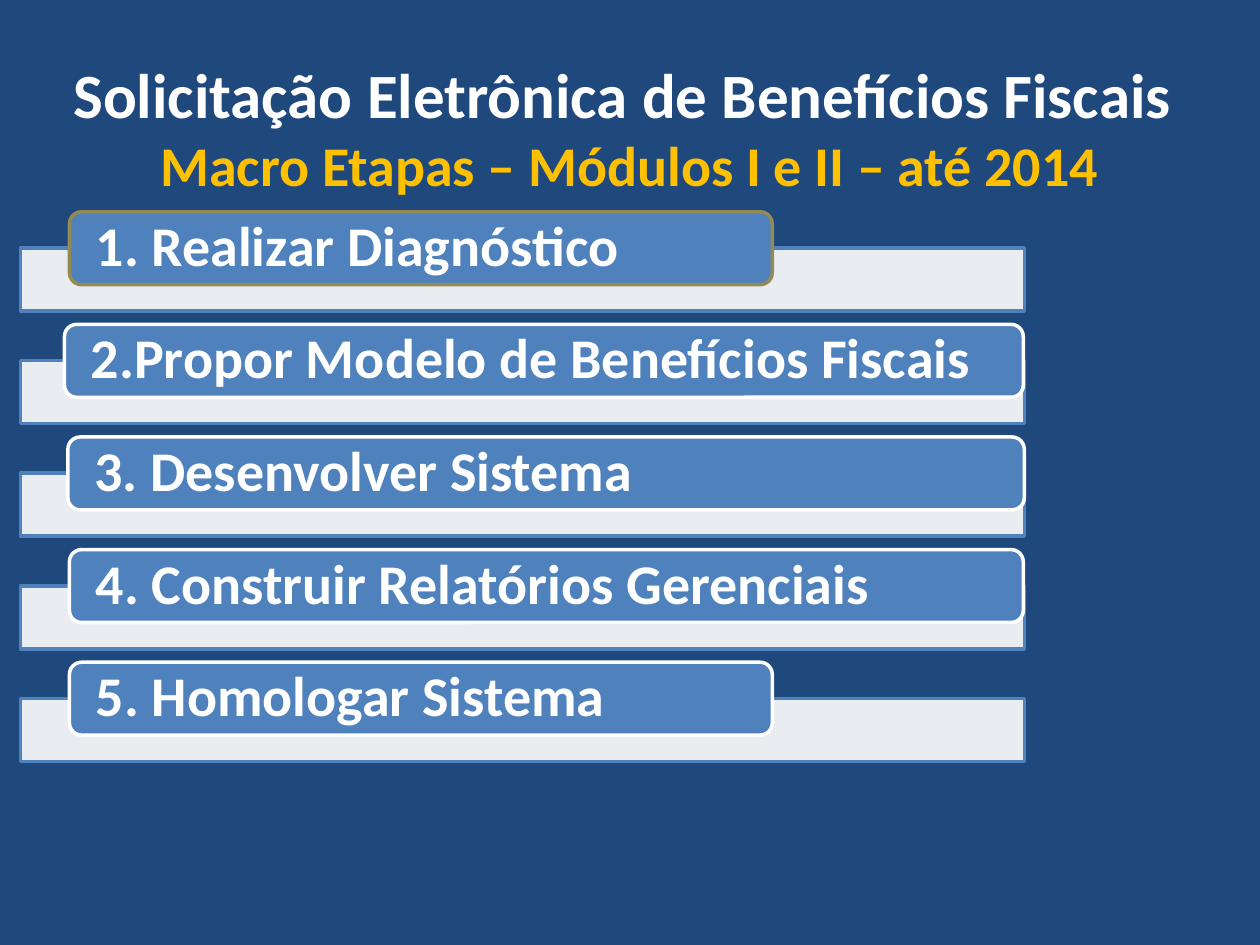
from lxml.etree import SubElement
from pptx import Presentation
from pptx.dml.color import RGBColor
from pptx.enum.shapes import MSO_SHAPE as SHAPE
from pptx.enum.text import MSO_ANCHOR as ANCHOR, PP_ALIGN as ALIGN
from pptx.oxml.ns import qn
from pptx.util import Cm, Pt

COLORS = {
    "navy": "1F497D",
    "blue": "4F81BD",
    "white": "FFFFFF",
    "gold": "FFC000",
    "olive": "948A54",
}
TITLE = [
    ("Solicitação Eletrônica de Benefícios Fiscais ", 36, "white"),
    ("Macro Etapas – Módulos I e II – até 2014", 32, "gold"),
]
STEPS = [
    ("1. Realizar Diagnóstico", 1.4, 14.17, "olive"),
    ("2.Propor Modelo de Benefícios Fiscais", 1.3, 19.33, "white"),
    ("3. Desenvolver Sistema", 1.37, 19.28, "white"),
    ("4. Construir Relatórios Gerenciais", 1.4, 19.23, "white"),
    ("5. Homologar Sistema", 1.4, 14.17, "white"),
]
FIRST_TOP = 4.27
PITCH = 2.27
TRACK_DROP = 0.73


def color(name):
    return RGBColor.from_string(COLORS[name])


def add_run(p, text, size, name):
    r = p.add_run()
    r.text = text
    r.font.name = "Calibri"
    r.font.size = Pt(size)
    r.font.bold = True
    r.font.color.rgb = color(name)


def add_box(slide, kind, left, top, width, height, fill, line):
    sp = slide.shapes.add_shape(kind, Cm(left), Cm(top), Cm(width), Cm(height))
    sp.shadow.inherit = False
    sp.fill.solid()
    sp.fill.fore_color.rgb = color(fill)
    sp.line.color.rgb = color(line)
    sp.line.width = Pt(2)
    return sp


def add_title(slide):
    tf = slide.shapes.add_textbox(Cm(1.19), Cm(0.99), Cm(23.01), Cm(4.7)).text_frame
    tf.word_wrap = True
    for i, (text, size, name) in enumerate(TITLE):
        p = tf.add_paragraph() if i else tf.paragraphs[0]
        p.alignment = ALIGN.CENTER
        add_run(p, text, size, name)


def add_track(slide, top):
    sp = add_box(slide, SHAPE.RECTANGLE, 0.41, top, 20.24, 1.27, "white", "blue")
    rgb = sp.fill._xPr.find(qn("a:solidFill")).find(qn("a:srgbClr"))
    SubElement(rgb, qn("a:alpha"), val="90000")


def add_step(slide, top, text, left, width, line):
    sp = add_box(slide, SHAPE.ROUNDED_RECTANGLE, left, top, width, 1.47, "blue", line)
    tf = sp.text_frame
    tf.word_wrap = True
    tf.vertical_anchor = ANCHOR.MIDDLE
    tf.margin_left = tf.margin_right = Cm(0.46)
    tf.margin_top = tf.margin_bottom = 0
    p = tf.paragraphs[0]
    p.alignment = ALIGN.LEFT
    p.line_spacing = 0.9
    add_run(p, text, 32, "white")


def main():
    prs = Presentation()
    prs.slide_width, prs.slide_height = Cm(25.4), Cm(19.05)
    slide = prs.slides.add_slide(prs.slide_layouts[6])
    slide.background.fill.solid()
    slide.background.fill.fore_color.rgb = color("navy")
    add_title(slide)
    for i, step in enumerate(STEPS):
        top = FIRST_TOP + i * PITCH
        add_track(slide, top + TRACK_DROP)
        add_step(slide, top, *step)
    prs.save("out.pptx")


if __name__ == "__main__":
    main()
